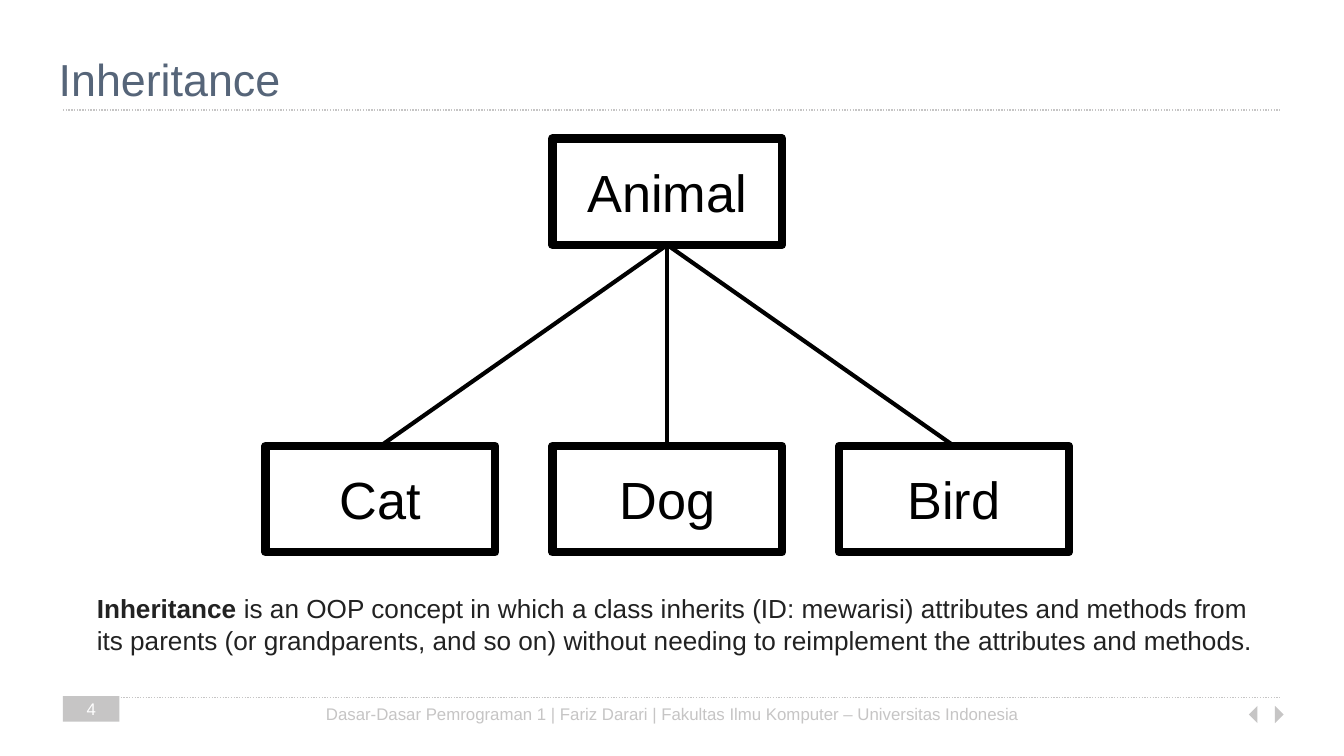
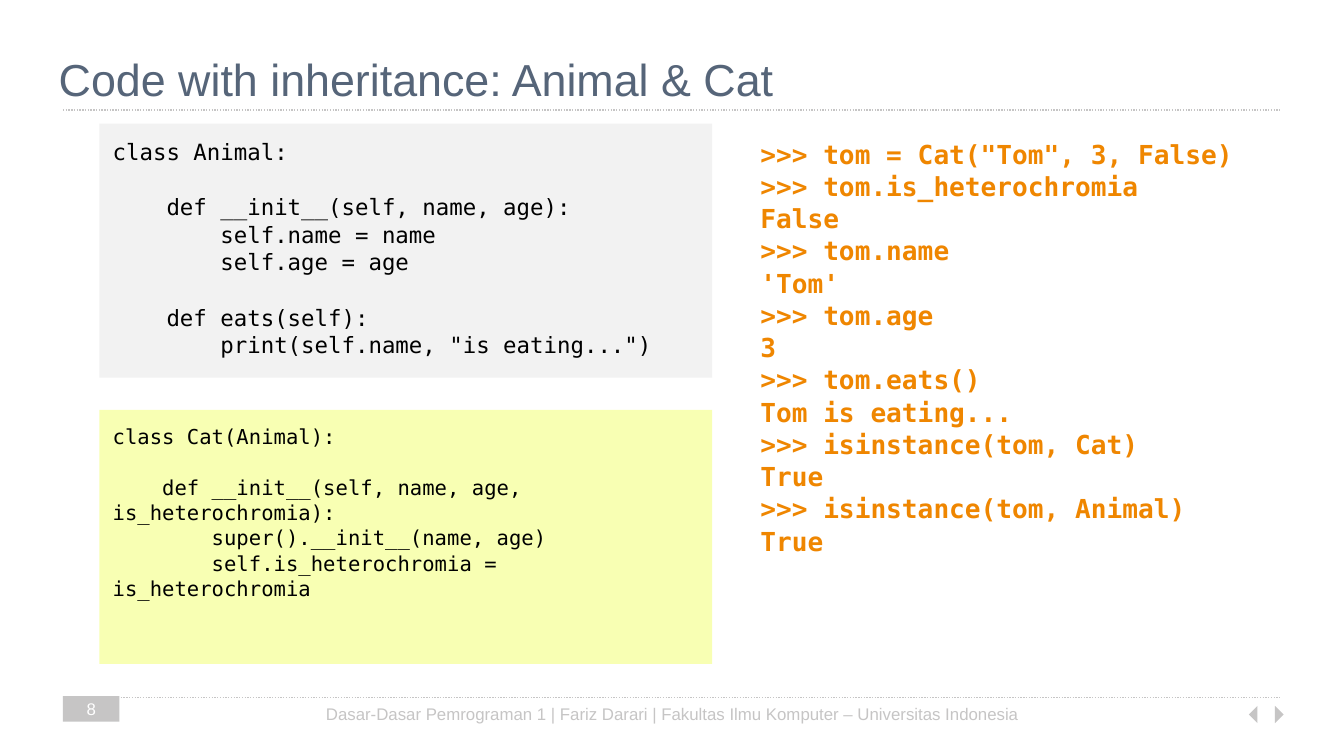
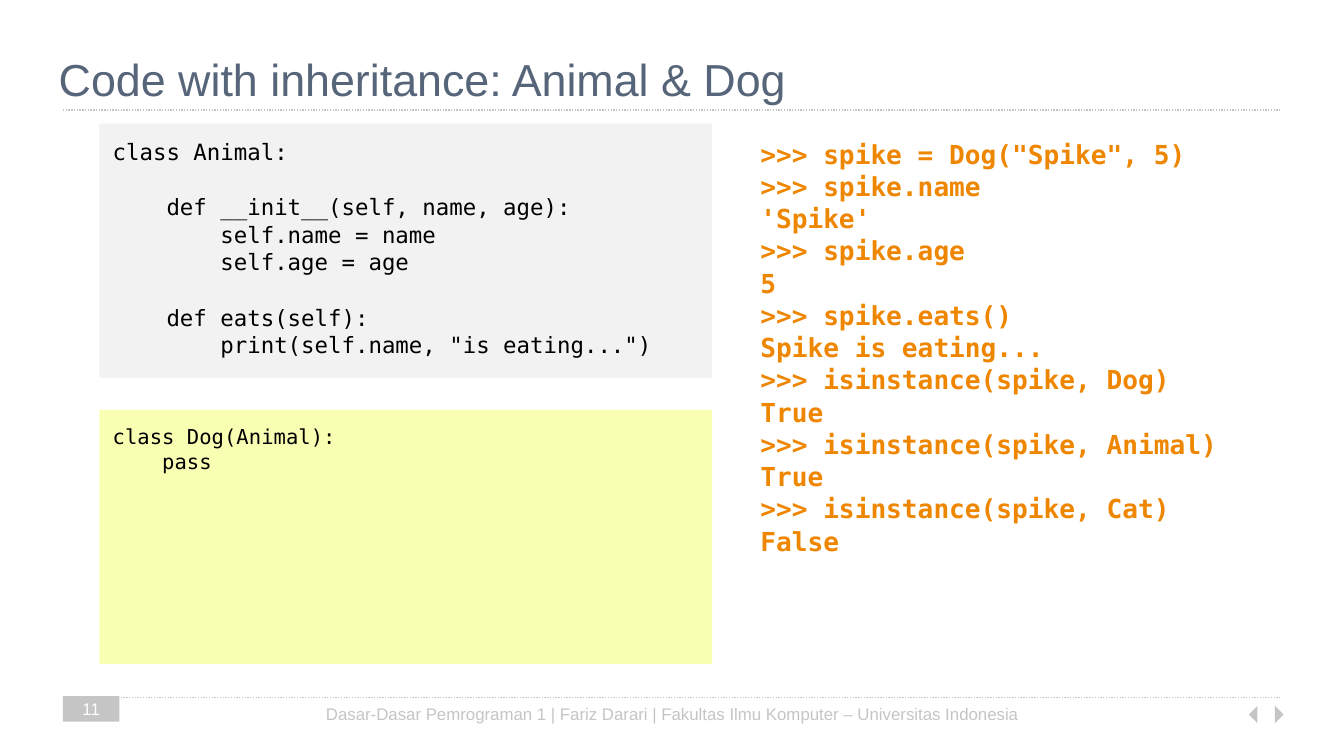
import pptx
import pptx.util
import pptx.dml.color
import pptx.enum.dml
import pptx.enum.shapes
import pptx.enum.text
import pptx.oxml.ns
import lxml.etree

Cm = pptx.util.Cm
Pt = pptx.util.Pt
RGBColor = pptx.dml.color.RGBColor
Shape = pptx.enum.shapes.MSO_SHAPE
Align = pptx.enum.text.PP_ALIGN
Anchor = pptx.enum.text.MSO_ANCHOR

# Content
FOOTER = "Dasar-Dasar Pemrograman 1 | Fariz Darari | Fakultas Ilmu Komputer – Universitas Indonesia"
PARENT, CHILDREN = "Animal", ["Cat", "Dog", "Bird"]
DEFINITION_TERM = "Inheritance"
DEFINITION_LINES = [
    " is an OOP concept in which a class inherits (ID: mewarisi) attributes and methods from",
    "its parents (or grandparents, and so on) without needing to reimplement the attributes and methods.",
]
ANIMAL_CODE = """class Animal:

    def __init__(self, name, age):
        self.name = name
        self.age = age

    def eats(self):
        print(self.name, "is eating...")"""
CAT_CODE = """class Cat(Animal):

    def __init__(self, name, age, is_heterochromia):
        super().__init__(name, age)
        self.is_heterochromia = is_heterochromia"""
DOG_CODE = """class Dog(Animal):
    pass"""
CAT_CONSOLE = """>>> tom = Cat("Tom", 3, False)
>>> tom.is_heterochromia
False
>>> tom.name
'Tom'
>>> tom.age
3
>>> tom.eats()
Tom is eating...
>>> isinstance(tom, Cat)
True
>>> isinstance(tom, Animal)
True"""
DOG_CONSOLE = """>>> spike = Dog("Spike", 5)
>>> spike.name
'Spike'
>>> spike.age
5
>>> spike.eats()
Spike is eating...
>>> isinstance(spike, Dog)
True
>>> isinstance(spike, Animal)
True
>>> isinstance(spike, Cat)
False"""
CODE_SLIDES = [
    ("Code with inheritance: Animal & Cat", 8, CAT_CODE, CAT_CONSOLE),
    ("Code with inheritance: Animal & Dog", 11, DOG_CODE, DOG_CONSOLE),
]

# Colours and text formats
WHITE = RGBColor(0xFF, 0xFF, 0xFF)
BLACK = RGBColor(0x00, 0x00, 0x00)
GREY = RGBColor(0xC6, 0xC5, 0xC5)
SLATE = RGBColor(0x56, 0x65, 0x79)
INK = RGBColor(0x22, 0x22, 0x22)
ORANGE = RGBColor(0xEF, 0x86, 0x00)
PALE_GREY = RGBColor(0xF2, 0xF2, 0xF2)
PALE_YELLOW = RGBColor(0xF8, 0xFF, 0xB3)

SANS, MONO = "Arial", "DejaVu Sans Mono"
TITLE_FORMAT = {"name": SANS, "size": Pt(24), "color": SLATE}
FOOTER_FORMAT = {"name": SANS, "size": Pt(9), "color": GREY}
NUMBER_FORMAT = {"name": SANS, "size": Pt(9), "color": WHITE}
CLASS_FORMAT = {"name": SANS, "size": Pt(28), "color": BLACK}
DEFINITION_FORMAT = {"name": SANS, "size": Pt(14), "color": INK}
PARENT_CODE_FORMAT = {"name": MONO, "size": Pt(12), "color": BLACK}
CHILD_CODE_FORMAT = {"name": MONO, "size": Pt(11), "color": BLACK}
CONSOLE_FORMAT = {"name": MONO, "size": Pt(14), "color": ORANGE, "bold": True}

# Layout, in centimetres
SLIDE_WIDTH, SLIDE_HEIGHT = 25.4, 14.29
LEFT, RIGHT = 1.19, 24.21
RULE_TOPS = (13.18, 2.08)
ARROWS = ((23.65, 45), (23.98, 225))
CLASS_WIDTH, CLASS_HEIGHT, CLASS_PITCH = 4.34, 2.01, 5.42
CLASS_LEFT, PARENT_TOP, CHILD_TOP = 5.02, 2.62, 8.43
CODE_LEFT, CODE_TOP, CODE_WIDTH, CODE_HEIGHT, CODE_PITCH = 1.88, 2.34, 11.58, 4.8, 5.41


def set_font(font, text_format):
    for attribute, value in text_format.items():
        if attribute == "color":
            font.color.rgb = value
        else:
            setattr(font, attribute, value)


def write(shape, text, text_format, align=Align.LEFT, anchor=Anchor.TOP, spacing=1.0, inset=0.25):
    frame = shape.text_frame
    frame.text = text
    frame.word_wrap = True
    frame.vertical_anchor = anchor
    for side in ("left", "top", "right", "bottom"):
        setattr(frame, "margin_" + side, Cm(inset))
    for paragraph in frame.paragraphs:
        paragraph.alignment = align
        paragraph.line_spacing = spacing
        set_font(paragraph.font, text_format)
        for run in paragraph.runs:
            set_font(run.font, text_format)


def add_textbox(slide, box, text, text_format, **options):
    shape = slide.shapes.add_textbox(*map(Cm, box))
    write(shape, text, text_format, **options)
    return shape


def add_shape(slide, kind, box, fill, line_width=None):
    shape = slide.shapes.add_shape(kind, *map(Cm, box))
    shape.shadow.inherit = False
    shape.fill.solid()
    shape.fill.fore_color.rgb = fill
    if line_width:
        shape.line.color.rgb = BLACK
        shape.line.width = Pt(line_width)
    else:
        shape.line.fill.background()
    return shape


def add_line(slide, ends, color, width):
    line = slide.shapes.add_connector(pptx.enum.shapes.MSO_CONNECTOR.STRAIGHT, *map(Cm, ends))
    line.line.color.rgb = color
    line.line.width = Pt(width)
    properties = line._element.spPr
    lxml.etree.SubElement(properties, pptx.oxml.ns.qn("a:effectLst"))
    return line


def add_base_slide(presentation, title, number):
    slide = presentation.slides.add_slide(presentation.slide_layouts[6])
    # Dotted rules and navigation arrows
    for top in RULE_TOPS:
        rule = add_line(slide, (LEFT, top, RIGHT, top), GREY, 0.75)
        rule.line.dash_style = pptx.enum.dml.MSO_LINE.ROUND_DOT
    for left, rotation in ARROWS:
        arrow = add_shape(slide, Shape.RIGHT_TRIANGLE, (left, 13.39, 0.23, 0.23), GREY)
        arrow.rotation = rotation
    # Page number, footer and title
    badge = add_shape(slide, Shape.RECTANGLE, (LEFT, 13.16, 1.07, 0.48), GREY)
    write(badge, str(number), NUMBER_FORMAT, align=Align.CENTER, anchor=Anchor.MIDDLE, inset=0)
    add_textbox(slide, (5.84, 13.03, 13.72, 0.69), FOOTER, FOOTER_FORMAT,
                align=Align.CENTER, spacing=1.15)
    add_textbox(slide, (0.86, 0.58, 23.67, 1.3), title, TITLE_FORMAT, spacing=1.15)
    return slide


def add_class_box(slide, name, column, top):
    box = (CLASS_LEFT + column * CLASS_PITCH, top, CLASS_WIDTH, CLASS_HEIGHT)
    shape = add_shape(slide, Shape.RECTANGLE, box, WHITE, 4.5)
    write(shape, name, CLASS_FORMAT, align=Align.CENTER, anchor=Anchor.MIDDLE)
    return shape


def add_hierarchy_slide(presentation):
    slide = add_base_slide(presentation, "Inheritance", 4)
    # Class tree
    parent = add_class_box(slide, PARENT, 1, PARENT_TOP)
    for column, name in enumerate(CHILDREN):
        child = add_class_box(slide, name, column, CHILD_TOP)
        link = add_line(slide, (0, 0, 0, 0), BLACK, 2.25)
        link.begin_connect(parent, 2)
        link.end_connect(child, 0)
    # Definition
    definition = add_textbox(slide, (LEFT, 11.05, 23.01, 1.45), DEFINITION_TERM,
                             {**DEFINITION_FORMAT, "bold": True}, spacing=1.03)
    frame = definition.text_frame
    frame.margin_left = Cm(0.64)
    frame.margin_top = frame.margin_bottom = Cm(0.13)
    paragraph = frame.paragraphs[0]
    for index, text in enumerate(DEFINITION_LINES):
        if index:
            paragraph.add_line_break()
        run = paragraph.add_run()
        run.text = text
        set_font(run.font, {**DEFINITION_FORMAT, "bold": False})


def add_code_slide(presentation, title, number, child_code, console):
    slide = add_base_slide(presentation, title, number)
    child_top = CODE_TOP + CODE_PITCH
    panels = [
        ((CODE_LEFT, CODE_TOP, CODE_WIDTH, CODE_HEIGHT), PALE_GREY, ANIMAL_CODE, PARENT_CODE_FORMAT),
        ((CODE_LEFT, child_top, CODE_WIDTH, CODE_HEIGHT), PALE_YELLOW, child_code, CHILD_CODE_FORMAT),
        ((14.12, CODE_TOP, 10.39, 8.81), WHITE, console, CONSOLE_FORMAT),
    ]
    for box, fill, text, text_format in panels:
        panel = add_shape(slide, Shape.RECTANGLE, box, fill)
        write(panel, text, text_format, spacing=1.03)


def main():
    presentation = pptx.Presentation()
    presentation.slide_width = Cm(SLIDE_WIDTH)
    presentation.slide_height = Cm(SLIDE_HEIGHT)
    add_hierarchy_slide(presentation)
    for content in CODE_SLIDES:
        add_code_slide(presentation, *content)
    presentation.save("out.pptx")


if __name__ == "__main__":
    main()
